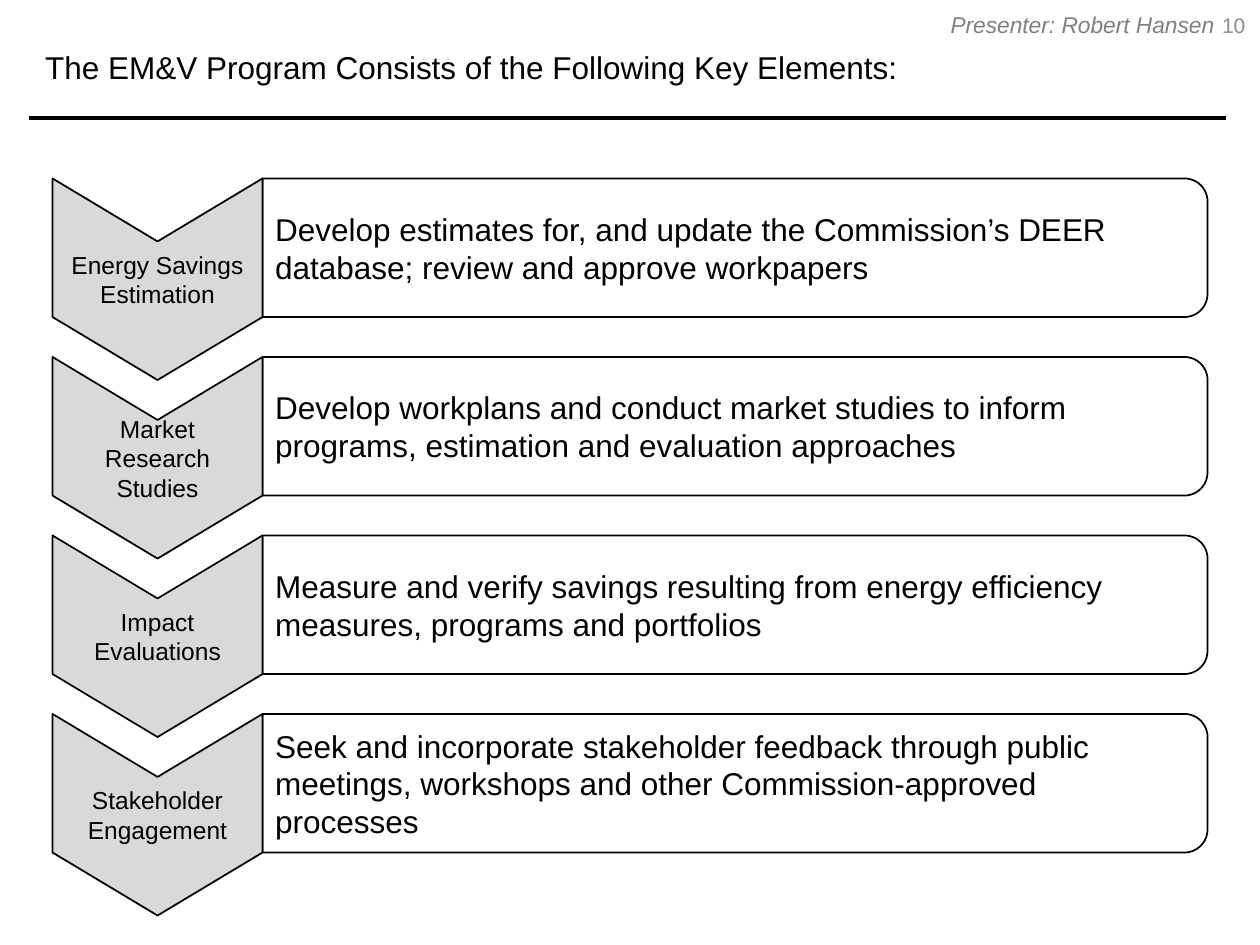
from dataclasses import dataclass

from lxml import etree
from pptx import Presentation
from pptx.dml.color import RGBColor
from pptx.enum.shapes import MSO_CONNECTOR, MSO_SHAPE
from pptx.enum.text import MSO_ANCHOR, PP_ALIGN
from pptx.oxml.ns import qn
from pptx.util import Pt

LEFT, CENTER, RIGHT = PP_ALIGN.LEFT, PP_ALIGN.CENTER, PP_ALIGN.RIGHT
MIDDLE = MSO_ANCHOR.MIDDLE
CHEVRON, BAR = MSO_SHAPE.CHEVRON, MSO_SHAPE.ROUND_2_SAME_RECTANGLE
STRAIGHT = MSO_CONNECTOR.STRAIGHT


@dataclass(frozen=True)
class Theme:
    font: str = "Arial"
    ink: RGBColor = RGBColor(0, 0, 0)
    presenter: RGBColor = RGBColor(0x80, 0x80, 0x80)
    number: RGBColor = RGBColor(0x8C, 0x8C, 0x8C)
    chevron: RGBColor = RGBColor(0xD9, 0xD9, 0xD9)
    body_size: int = 18
    label_size: int = 14
    presenter_size: int = 13
    number_size: int = 12


THEME = Theme()

ELEMENTS = [
    ("Energy Savings Estimation",
     "Develop estimates for, and update the Commission’s DEER database; "
     "review and approve workpapers"),
    ("Market Research Studies",
     "Develop workplans and conduct market studies to inform programs, "
     "estimation and evaluation approaches"),
    ("Impact Evaluations",
     "Measure and verify savings resulting from energy efficiency measures, "
     "programs and portfolios"),
    ("Stakeholder Engagement",
     "Seek and incorporate stakeholder feedback through public meetings, "
     "workshops and other Commission-approved processes"),
]


def set_text(sp, text, size, color=THEME.ink, align=LEFT, italic=False):
    tf = sp.text_frame
    tf.word_wrap = True
    tf.vertical_anchor = MIDDLE
    tf.text = text
    p = tf.paragraphs[0]
    p.alignment = align
    font = p.runs[0].font
    font.name, font.size, font.italic = THEME.font, Pt(size), italic
    font.color.rgb = color


def add_text(slide, box, *args, **style):
    sp = slide.shapes.add_textbox(*map(Pt, box))
    set_text(sp, *args, **style)


def add_turned_shape(slide, kind, box):
    """Add a shape turned by 90° that fills box as seen and keeps its text upright."""
    x, y, w, h = box
    sp = slide.shapes.add_shape(
        kind, Pt(x + (w - h) / 2), Pt(y + (h - w) / 2), Pt(h), Pt(w))
    sp.rotation = 90
    sp.shadow.inherit = False
    sp.line.color.rgb = THEME.ink
    sp.line.width = Pt(1)
    sp.text_frame._txBody.bodyPr.set("vert", "vert270")
    return sp


def add_header(slide, x, y, w, h):
    add_text(slide, (x, y, w, h),
             "The EM&V Program Consists of the Following Key Elements:", THEME.body_size)
    rule = slide.shapes.add_connector(STRAIGHT, Pt(16.8), Pt(67.5), Pt(700.8), Pt(67.5))
    rule.line.color.rgb = THEME.ink
    rule.line.width = Pt(2)
    etree.SubElement(rule._element.spPr, qn("a:effectLst"))


def add_corner(slide, x, y, w, h):
    number_w = 30
    add_text(slide, (x + w - number_w, y, number_w, h), "10",
             THEME.number_size, THEME.number, CENTER)
    add_text(slide, (x, y + 5, w - number_w + 10.8, 17.5), "Presenter: Robert Hansen",
             THEME.presenter_size, THEME.presenter, RIGHT, italic=True)


def add_element(slide, label, detail, x, y, w, h):
    """Place one row: a downward chevron with its label and a bar with the detail."""
    chevron_w, bar_h = 120, 79.2

    bar = add_turned_shape(slide, BAR, (x + chevron_w, y, w - chevron_w, bar_h))
    bar.fill.background()
    tf = bar.text_frame
    tf.margin_left = tf.margin_right = Pt(3.6)
    tf.margin_top = tf.margin_bottom = Pt(7.2)
    set_text(bar, detail, THEME.body_size)

    chevron = add_turned_shape(slide, CHEVRON, (x, y, chevron_w, h))
    chevron.adjustments[0] = (h - bar_h) / min(h, chevron_w)
    chevron.fill.solid()
    chevron.fill.fore_color.rgb = THEME.chevron
    set_text(chevron, label, THEME.label_size, align=CENTER)


def add_elements(slide, x, y, w, h):
    row_h = 115.2
    pitch = (h - row_h) / (len(ELEMENTS) - 1)
    for i, (label, detail) in enumerate(ELEMENTS):
        add_element(slide, label, detail, x, y + i * pitch, w, row_h)


def main():
    prs = Presentation()
    prs.slide_width, prs.slide_height = Pt(720), Pt(540)
    slide = prs.slides.add_slide(prs.slide_layouts[6])
    add_header(slide, 18.7, 4.3, 680.4, 67.7)
    add_elements(slide, 30, 102, 660, 421.2)
    add_corner(slide, 525, 0, 195, 28.8)
    prs.save("out.pptx")


if __name__ == "__main__":
    main()
